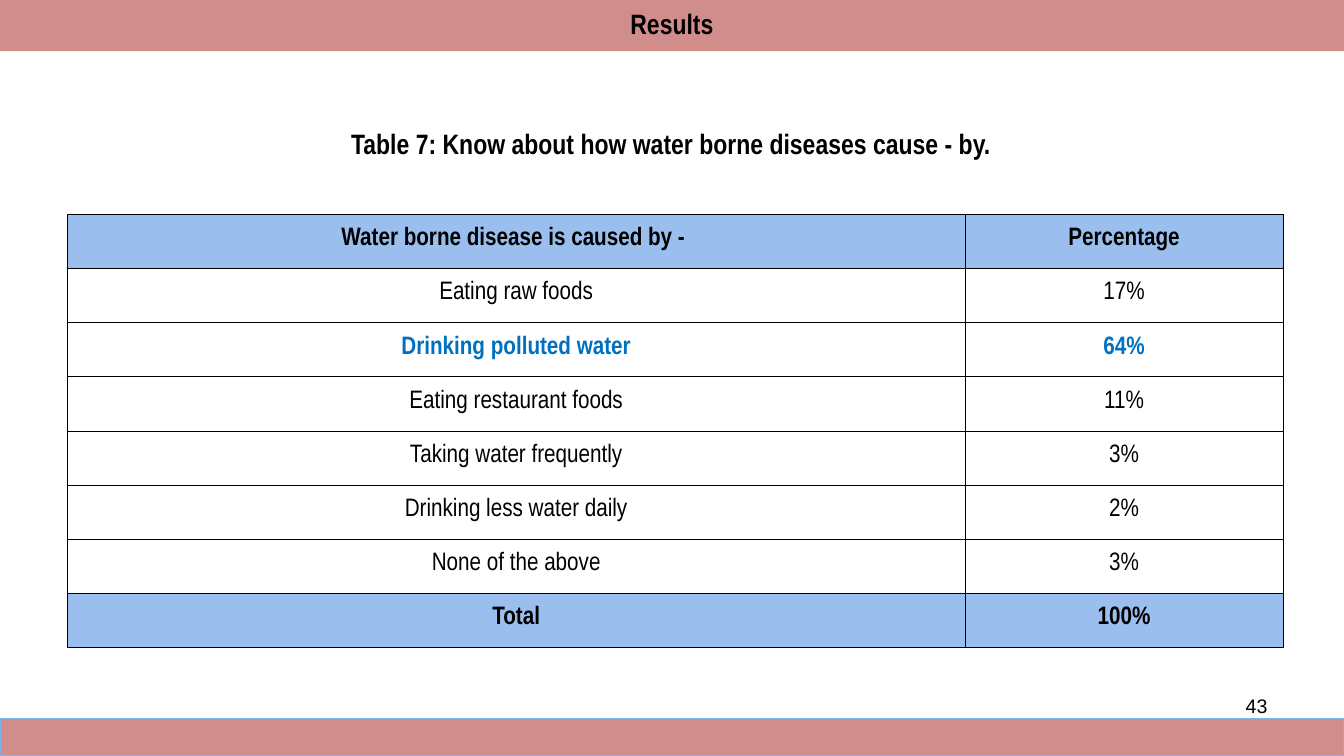
import pptx
import pptx.util
import pptx.dml.color
import pptx.enum.shapes
import pptx.enum.text
from lxml import etree

Pt = pptx.util.Pt
Align = pptx.enum.text.PP_ALIGN
Anchor = pptx.enum.text.MSO_ANCHOR

TITLE = "Results"
CAPTION = "Table 7: Know about how water borne diseases cause - by. "
PAGE_NUMBER = "43"
ROWS = [
    ("Water borne disease is caused by - ", "Percentage"),
    ("Eating raw foods", "17%"),
    ("Drinking polluted water", "64%"),
    ("Eating restaurant foods", "11%"),
    ("Taking water frequently", "3%"),
    ("Drinking less water daily", "2%"),
    ("None of the above", "3%"),
    ("Total", "100%"),
]
SHADED_ROWS = (0, len(ROWS) - 1)
HIGHLIGHT_ROW = 2

BLACK, BLUE = "000000", "0070C0"
ROSE, SKY, BAND_EDGE = "D18D8B", "9ABFEF", "7DB6EF"
WIDTH, HEIGHT = 960, 540
COLUMN_WIDTHS = (641.5, 227)
ROW_HEIGHT = 38.7
TABLE_LEFT, TABLE_TOP = 48, 153
BOTTOM_BAND = 27


def color(value):
    return pptx.dml.color.RGBColor.from_string(value)


def paint(item, value):
    item.fill.solid()
    item.fill.fore_color.rgb = color(value)


def write(frame, text, size=20, font="Arial Narrow", ink=BLACK, bold=False,
          align=Align.CENTER, spacing=None):
    para = frame.paragraphs[0]
    para.alignment = align
    if spacing:
        para.line_spacing = spacing
    span = para.add_run()
    span.text = text
    span.font.size = Pt(size)
    span.font.name = font
    span.font.bold = bold
    span.font.color.rgb = color(ink)


def add_text(page, left, top, width, height, text, **style):
    box = page.shapes.add_textbox(Pt(left), Pt(top), Pt(width), Pt(height))
    box.text_frame.word_wrap = True
    write(box.text_frame, text, **style)


def outline(cell):
    properties = cell._tc.get_or_add_tcPr()
    namespace = "{http://schemas.openxmlformats.org/drawingml/2006/main}"
    for position, side in enumerate(("lnL", "lnR", "lnT", "lnB")):
        edge = etree.Element(namespace + side, w=str(Pt(0.5)))
        solid = etree.SubElement(edge, namespace + "solidFill")
        etree.SubElement(solid, namespace + "srgbClr", val=BLACK)
        properties.insert(position, edge)


def add_title(page):
    title = page.shapes.title
    title.left, title.top, title.width, title.height = Pt(0), Pt(0), Pt(WIDTH), Pt(36.5)
    paint(title, ROSE)
    frame = title.text_frame
    frame.word_wrap = True
    frame.auto_size = pptx.enum.text.MSO_AUTO_SIZE.NONE
    frame.vertical_anchor = Anchor.MIDDLE
    frame.margin_left = frame.margin_right = Pt(5)
    frame.margin_top = frame.margin_bottom = Pt(3)
    write(frame, TITLE, bold=True, spacing=0.9)


def add_causes(page):
    table = page.shapes.add_table(
        len(ROWS), len(COLUMN_WIDTHS), Pt(TABLE_LEFT), Pt(TABLE_TOP),
        Pt(sum(COLUMN_WIDTHS)), Pt(ROW_HEIGHT * len(ROWS))).table
    table.first_row = table.horz_banding = False
    for column, width in zip(table.columns, COLUMN_WIDTHS):
        column.width = Pt(width)
    for row_index, texts in enumerate(ROWS):
        table.rows[row_index].height = Pt(ROW_HEIGHT)
        shaded = row_index in SHADED_ROWS
        highlighted = row_index == HIGHLIGHT_ROW
        for column_index, text in enumerate(texts):
            cell = table.cell(row_index, column_index)
            cell.vertical_anchor = Anchor.MIDDLE
            cell.margin_left = cell.margin_right = cell.margin_top = Pt(0.7)
            cell.margin_bottom = Pt(3.6)
            if shaded:
                paint(cell, SKY)
            else:
                cell.fill.background()
            outline(cell)
            write(cell.text_frame, text, size=18, bold=shaded or highlighted,
                  ink=BLUE if highlighted else BLACK)


def add_bottom_band(page):
    band = page.shapes.add_shape(
        pptx.enum.shapes.MSO_SHAPE.RECTANGLE, Pt(0), Pt(HEIGHT - BOTTOM_BAND),
        Pt(WIDTH), Pt(BOTTOM_BAND))
    band.shadow.inherit = False
    paint(band, ROSE)
    band.line.color.rgb = color(BAND_EDGE)
    band.line.width = Pt(0.75)


def main():
    deck = pptx.Presentation()
    deck.slide_width, deck.slide_height = Pt(WIDTH), Pt(HEIGHT)
    page = deck.slides.add_slide(deck.slide_layouts[5])
    add_title(page)
    add_causes(page)
    add_bottom_band(page)
    add_text(page, 42, 87, 879, 31.5, CAPTION, bold=True)
    add_text(page, 688.5, 492, 224, 37.5, PAGE_NUMBER, size=14, font="Arial",
             align=Align.RIGHT)
    deck.save("out.pptx")


if __name__ == "__main__":
    main()
